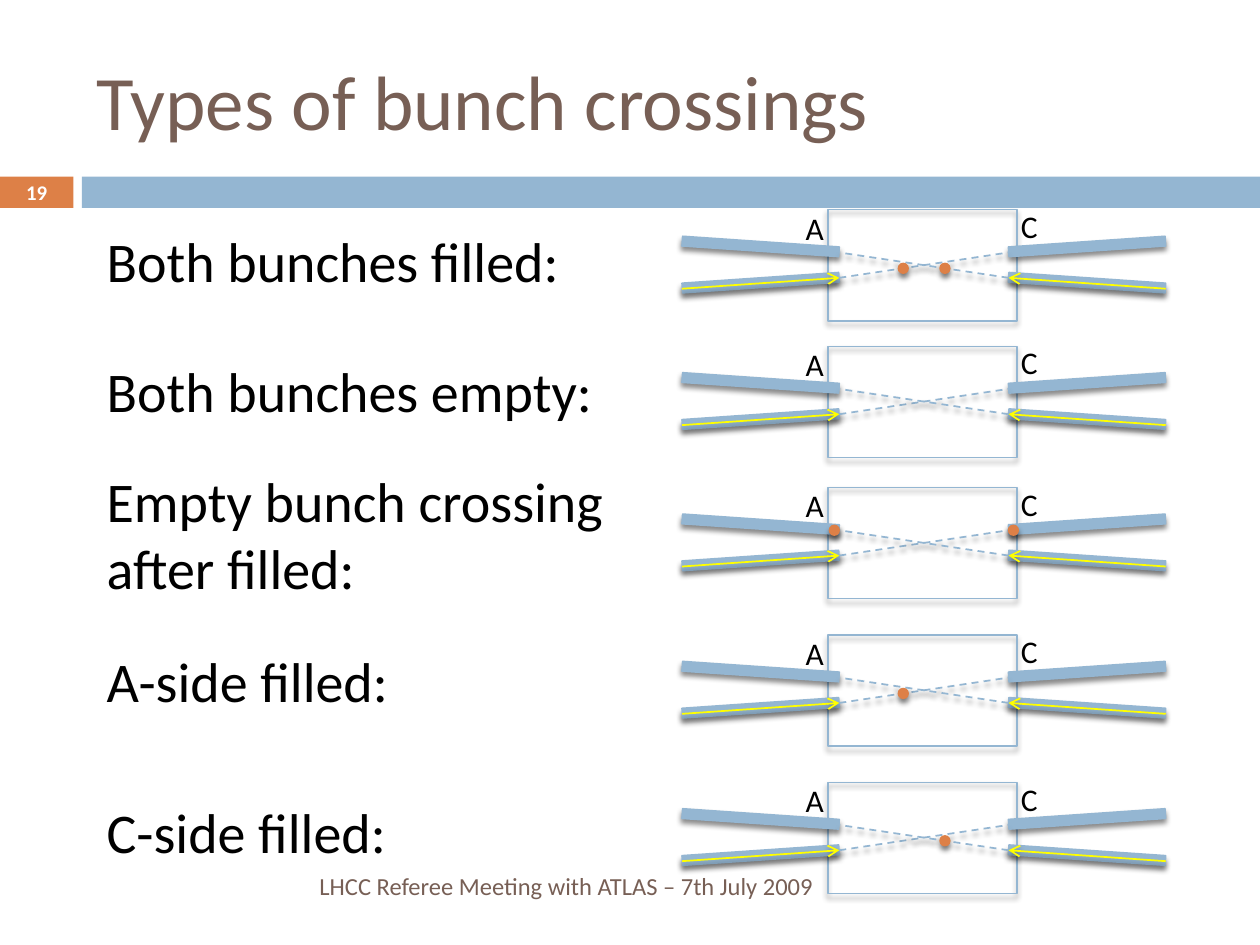
from lxml.etree import SubElement
from pptx import Presentation
from pptx.dml.color import RGBColor
from pptx.enum.dml import MSO_LINE
from pptx.enum.shapes import MSO_CONNECTOR, MSO_SHAPE as SHAPE
from pptx.enum.text import MSO_ANCHOR as ANCHOR, PP_ALIGN as ALIGN
from pptx.oxml.ns import qn
from pptx.util import Cm, Pt

BLUE = RGBColor(0x94, 0xB6, 0xD2)
ORANGE = RGBColor(0xDD, 0x80, 0x47)
YELLOW = RGBColor(0xFF, 0xFF, 0x00)
BROWN = RGBColor(0x77, 0x5F, 0x55)
BLACK = RGBColor(0, 0, 0)
WHITE = RGBColor(0xFF, 0xFF, 0xFF)

# Diagram columns, shared by all crossings (cm)
PIPE_WIDTH, PIPE_HEIGHT, PIPE_TILT = 3.17, 0.2, 3.9
A_START, C_START = 13.75, 20.33
A_INNER, C_INNER, C_OUTER = A_START + PIPE_WIDTH, C_START, C_START + PIPE_WIDTH
# Heights below the top of the detector box (cm)
UPPER_PIPE, LOWER_PIPE = 0.64, 1.37
BEAM_OUTER, BEAM_INNER, EXIT_INNER = 1.59, 1.37, 0.86
# Bunch positions: left, and distance below the box top (cm)
A_INCOMING, C_INCOMING = (18.11, 1.08), (18.95, 1.08)
A_LEAVING, C_LEAVING = (16.72, 0.76), (20.33, 0.76)

# Wording, text top, text height, box top, bunches
CROSSINGS = [
    ("Both bunches filled:", 4.45, 1.62, 4.23, [C_INCOMING, A_INCOMING]),
    ("Both bunches empty:", 7.06, 1.62, 6.98, []),
    ("Empty bunch crossing after filled:", 9.27, 3.0, 9.83,
     [A_LEAVING, C_LEAVING]),
    ("A-side filled:", 12.9, 1.62, 12.8, [A_INCOMING]),
    ("C-side filled:", 15.95, 1.62, 15.77, [C_INCOMING]),
]


def add_soft_shadow(spPr):
    effects = spPr.find(qn("a:effectLst"))
    if effects is None:
        effects = SubElement(spPr, qn("a:effectLst"))
    shadow = SubElement(effects, qn("a:outerShdw"), blurRad=str(Pt(3)),
                        dist=str(Pt(2.4)), dir="5400000", rotWithShape="0")
    color = SubElement(shadow, qn("a:srgbClr"), val="000000")
    SubElement(color, qn("a:alpha"), val="45000")


def add_block(parent, kind, left, top, width, height, fill=None, line=None,
              rotation=0):
    block = parent.shapes.add_shape(kind, Cm(left), Cm(top), Cm(width),
                                    Cm(height))
    block.rotation = rotation
    block.shadow.inherit = False
    if fill is None:
        block.fill.background()
    else:
        block.fill.solid()
        block.fill.fore_color.rgb = fill
    if line is None:
        block.line.fill.background()
    else:
        block.line.color.rgb = line
        block.line.width = Pt(0.79)
        add_soft_shadow(block._element.spPr)


def add_path(parent, x1, y1, x2, y2, color, dashed=False):
    """Draw a dashed path, or a solid one with an arrowhead."""
    path = parent.shapes.add_connector(MSO_CONNECTOR.STRAIGHT, Cm(x1), Cm(y1),
                                       Cm(x2), Cm(y2))
    path.line.color.rgb = color
    path.line.width = Pt(1)
    if dashed:
        path.line.dash_style = MSO_LINE.DASH
    else:
        SubElement(path.line._get_or_add_ln(), qn("a:tailEnd"), type="arrow")
    add_soft_shadow(path._element.spPr)


def add_text(slide, words, left, top, width, height, size, color=BLACK,
             align=ALIGN.LEFT, anchor=ANCHOR.TOP, bold=False):
    frame = slide.shapes.add_textbox(Cm(left), Cm(top), Cm(width),
                                     Cm(height)).text_frame
    frame.word_wrap = True
    frame.vertical_anchor = anchor
    frame.text = words
    paragraph = frame.paragraphs[0]
    paragraph.alignment = align
    font = paragraph.runs[0].font
    font.name, font.size, font.bold = "Calibri", Pt(size), bold
    font.color.rgb = color


def add_crossing(slide, top, bunches):
    diagram = slide.shapes.add_group_shape()
    add_block(diagram, SHAPE.RECTANGLE, 16.69, top, 3.81, 2.24, line=BLUE)

    # Beam pipes, tilted towards the middle
    for left, tilt in ((C_START, -PIPE_TILT), (A_START, PIPE_TILT)):
        for drop, angle in ((UPPER_PIPE, tilt), (LOWER_PIPE, -tilt)):
            add_block(diagram, SHAPE.RECTANGLE, left, top + drop, PIPE_WIDTH,
                      PIPE_HEIGHT, BLUE, BLUE, angle)

    # Incoming beams, then their paths through the detector
    for outer, inner in ((A_START, A_INNER), (C_OUTER, C_INNER)):
        add_path(diagram, outer, top + BEAM_OUTER, inner, top + BEAM_INNER,
                 YELLOW)
    for entry, leave in ((A_INNER, C_INNER), (C_INNER, A_INNER)):
        add_path(diagram, entry, top + BEAM_INNER, leave, top + EXIT_INNER,
                 BLUE, dashed=True)

    for left, drop in bunches:
        add_block(diagram, SHAPE.OVAL, left, top + drop, 0.2, 0.2, ORANGE,
                  ORANGE)

    # Side names
    add_text(slide, "A", 15.99, top - 0.15, 1.12, 1.02, 18)
    add_text(slide, "C", 20.33, top - 0.18, 1.12, 1.02, 18)


def main():
    deck = Presentation()
    deck.slide_width, deck.slide_height = Cm(25.4), Cm(19.05)
    slide = deck.slides.add_slide(deck.slide_layouts[6])

    # Header band, title and page number
    add_block(slide, SHAPE.RECTANGLE, 0, 3.56, 1.48, 0.63, ORANGE)
    add_block(slide, SHAPE.RECTANGLE, 1.65, 3.56, 23.75, 0.63, BLUE)
    add_text(slide, "Types of bunch crossings", 1.7, 0.64, 22.65, 2.74, 44,
             BROWN, anchor=ANCHOR.MIDDLE)
    add_text(slide, "19", 0, 3.53, 1.48, 0.69, 11.9, WHITE, ALIGN.CENTER,
             ANCHOR.MIDDLE, bold=True)

    # Crossing types
    for words, text_top, text_height, box_top, bunches in CROSSINGS:
        add_crossing(slide, box_top, bunches)
        add_text(slide, words, 1.9, text_top, 10.8, text_height, 32)

    # Footer
    add_text(slide, "LHCC Referee Meeting with ATLAS – 7th July 2009 ", 1.7,
             17.35, 15.06, 1.02, 14, BROWN, ALIGN.RIGHT, ANCHOR.MIDDLE)

    deck.save("out.pptx")


if __name__ == "__main__":
    main()
